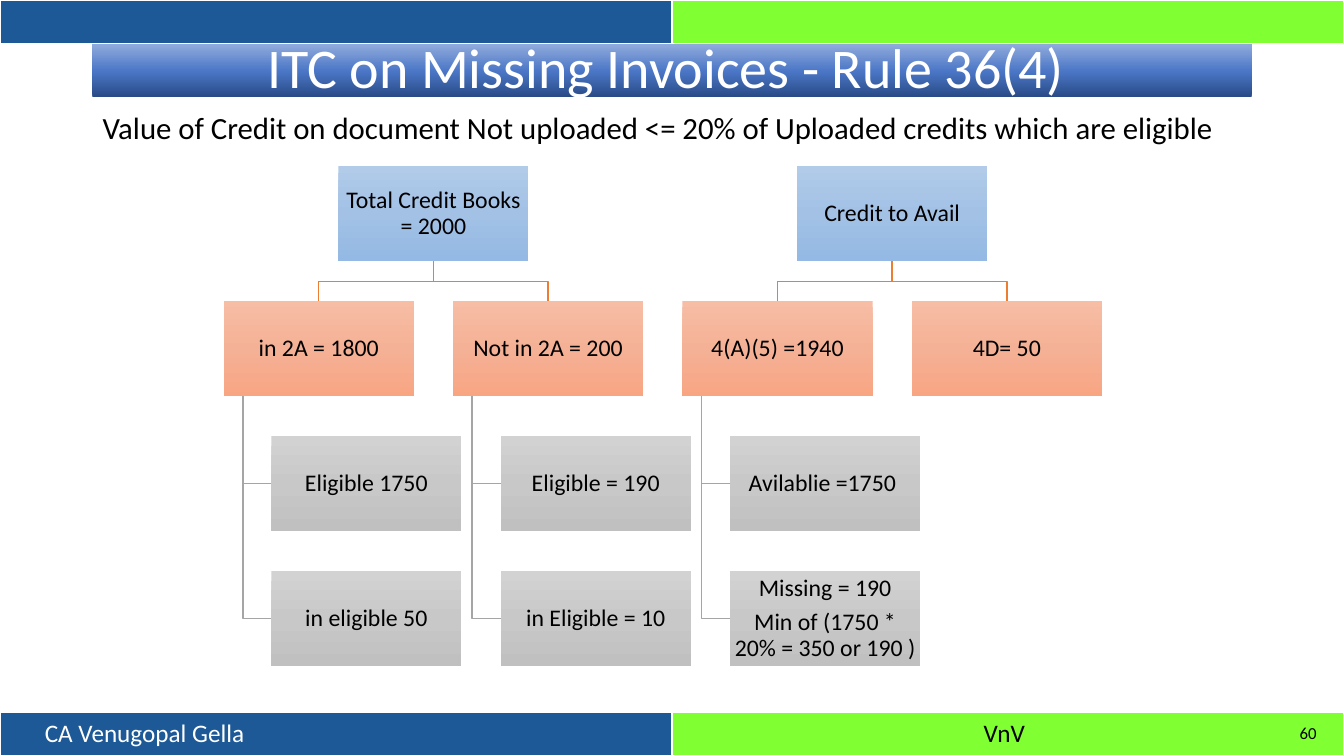
from copy import deepcopy

from lxml.etree import SubElement
from pptx import Presentation
from pptx.dml.color import RGBColor
from pptx.enum.shapes import MSO_SHAPE as Preset
from pptx.enum.text import MSO_ANCHOR as Anchor, MSO_AUTO_SIZE as AutoSize, PP_ALIGN as Align
from pptx.oxml.ns import qn
from pptx.util import Cm, Pt

WHITE = RGBColor(0xFF, 0xFF, 0xFF)
BLACK = RGBColor(0x00, 0x00, 0x00)
BLUE = RGBColor(0x1D, 0x59, 0x96)
GREEN = RGBColor(0x80, 0xFF, 0x33)
ORANGE = RGBColor(0xED, 0x7D, 0x31)
GRAY = RGBColor(0xA5, 0xA5, 0xA5)
TITLE_SHADES = [(0, RGBColor(0x2A, 0x4B, 0x86)), (0.48, RGBColor(0x4A, 0x76, 0xC6)),
                (1, RGBColor(0x8F, 0xAA, 0xDC))]
ROOT_SHADES = [(0, RGBColor(0xB1, 0xCB, 0xE9)), (0.5, RGBColor(0xA3, 0xC1, 0xE5)),
               (1, RGBColor(0x93, 0xB9, 0xE4))]
BRANCH_SHADES = [(0, RGBColor(0xF7, 0xBD, 0xA5)), (0.5, RGBColor(0xF5, 0xB1, 0x96)),
                 (1, RGBColor(0xF8, 0xA5, 0x82))]
LEAF_SHADES = [(0, RGBColor(0xD2, 0xD2, 0xD2)), (0.5, RGBColor(0xC8, 0xC8, 0xC8)),
               (1, RGBColor(0xC0, 0xC0, 0xC0))]

SLIDE_WIDTH, SLIDE_HEIGHT = Cm(33.87), Cm(19.05)
BAND_HEIGHT = Cm(1.09)
NODE_WIDTH, NODE_HEIGHT = Cm(4.79), Cm(2.4)
COLUMN_STEP, ROW_STEP = Cm(5.78), Cm(3.4)
LEAF_INDENT, STEM_INDENT = Cm(1.2), Cm(0.48)

# Each tree: root text, then branches of (text, leaves); a leaf is a list of lines.
TREES = [
    ("Total Credit Books = 2000", [
        ("in 2A = 1800", [["Eligible 1750"], ["in eligible 50"]]),
        ("Not in 2A = 200", [["Eligible = 190"], ["in Eligible = 10"]]),
    ]),
    ("Credit to Avail", [
        ("4(A)(5) =1940", [["Avilablie =1750 "],
                           ["Missing = 190", "Min of (1750 * 20% = 350 or 190 )"]]),
        ("4D= 50", []),
    ]),
]


def write_text(frame, lines, size, color=BLACK, align=Align.LEFT, anchor=Anchor.TOP,
               spacing=1.0, before=0, after=0, wrap=True):
    frame.auto_size = AutoSize.NONE
    frame.word_wrap = wrap
    frame.vertical_anchor = anchor
    for index, line in enumerate(lines):
        para = frame.paragraphs[0] if index == 0 else frame.add_paragraph()
        para.alignment, para.line_spacing = align, spacing
        para.space_before, para.space_after = Pt(before), Pt(after)
        span = para.add_run()
        span.text = line
        span.font.name, span.font.size = "Calibri", Pt(size)
        span.font.color.rgb = color


def place(shape, left, top, width, height):
    shape.left, shape.top, shape.width, shape.height = left, top, width, height


def shade(shape, stops, angle):
    """Fill with a three-stop gradient; the angle runs counterclockwise."""
    fill = shape.fill
    fill.gradient()
    fill.gradient_angle = angle
    stop_list = next(shape.element.iter(qn("a:gsLst")))
    stop_list.append(deepcopy(stop_list[-1]))
    for stop, (position, color) in zip(fill.gradient_stops, stops):
        stop.position = position
        stop.color.rgb = color


def add_band(page, top):
    frame = page.shapes.add_table(1, 2, 0, top, SLIDE_WIDTH, BAND_HEIGHT)
    for cell, color in zip(frame.table.rows[0].cells, (BLUE, GREEN)):
        cell.fill.solid()
        cell.fill.fore_color.rgb = color


def add_label(page, text, left, top, width, height, **text_format):
    box = page.shapes.add_textbox(left, top, width, height)
    write_text(box.text_frame, [text], **text_format)


def add_footer(page, top):
    add_band(page, top)
    height = Cm(1.03)
    add_label(page, "CA Venugopal Gella", Cm(0.88), top, Cm(5.61), height,
              size=18, color=WHITE, wrap=False)
    add_label(page, "VnV", Cm(24.54), top, Cm(1.57), height, size=18, wrap=False)
    add_label(page, "60", Cm(25.81), top, Cm(7.62), height,
              size=12, align=Align.RIGHT, anchor=Anchor.MIDDLE)


def fill_title(title, *box):
    place(title, *box)
    shade(title, TITLE_SHADES, 90)
    write_text(title.text_frame, ["ITC on Missing Invoices - Rule 36(4) "], size=40,
               color=WHITE, align=Align.CENTER, anchor=Anchor.MIDDLE, spacing=0.9)


def fill_body(body, *box):
    place(body, *box)
    write_text(body.text_frame, ["Value of Credit on document Not uploaded <= 20% of "
                                 "Uploaded credits which are eligible"],
               size=22, align=Align.JUSTIFY, spacing=0.9, before=10)
    properties = next(body.element.iter(qn("a:pPr")))
    properties.set("marL", "0")
    properties.set("indent", "0")
    SubElement(properties, qn("a:buNone"))


def add_elbow(page, points, color):
    builder = page.shapes.build_freeform(*points[0])
    builder.add_line_segments(points[1:], close=False)
    elbow = builder.convert_to_shape()
    elbow.fill.background()
    elbow.line.color.rgb = color
    elbow.line.width = Pt(1)
    elbow.shadow.inherit = False


def add_node(page, lines, left, top, shades):
    node = page.shapes.add_shape(Preset.RECTANGLE, left, top, NODE_WIDTH, NODE_HEIGHT)
    node.shadow.inherit = False
    node.line.fill.background()
    shade(node, shades, 270)
    frame = node.text_frame
    frame.margin_left = frame.margin_right = frame.margin_top = frame.margin_bottom = Cm(0.03)
    write_text(frame, lines, size=17, align=Align.CENTER, anchor=Anchor.MIDDLE,
               spacing=0.9, after=6)


def add_branch(page, text, leaves, left, top):
    stem, leaf_left = left + STEM_INDENT, left + LEAF_INDENT
    for row, lines in enumerate(leaves, start=1):
        leaf_top = top + row * ROW_STEP
        middle = leaf_top + NODE_HEIGHT // 2
        add_elbow(page, [(stem, top + NODE_HEIGHT), (stem, middle), (leaf_left, middle)], GRAY)
        add_node(page, lines, leaf_left, leaf_top, LEAF_SHADES)
    add_node(page, [text], left, top, BRANCH_SHADES)


def add_tree(page, root, branches, left, top):
    root_left = left + (len(branches) - 1) * COLUMN_STEP // 2
    center, root_bottom = root_left + NODE_WIDTH // 2, top + NODE_HEIGHT
    branch_top = top + ROW_STEP
    fork = (root_bottom + branch_top) // 2
    for column, (text, leaves) in enumerate(branches):
        branch_left = left + column * COLUMN_STEP
        branch_center = branch_left + NODE_WIDTH // 2
        add_elbow(page, [(center, root_bottom), (center, fork),
                         (branch_center, fork), (branch_center, branch_top)], ORANGE)
        add_branch(page, text, leaves, branch_left, branch_top)
    add_node(page, [root], root_left, top, ROOT_SHADES)


def add_trees(page, left, top):
    for root, branches in TREES:
        add_tree(page, root, branches, left, top)
        left += len(branches) * COLUMN_STEP


def main():
    deck = Presentation()
    deck.slide_width, deck.slide_height = SLIDE_WIDTH, SLIDE_HEIGHT
    page = deck.slides.add_slide(deck.slide_layouts[1])
    add_band(page, 0)
    add_footer(page, SLIDE_HEIGHT - BAND_HEIGHT)
    fill_title(page.shapes.title, Cm(2.33), Cm(1.12), Cm(29.21), Cm(1.32))
    fill_body(page.placeholders[1], Cm(2.33), Cm(2.72), Cm(29.21), Cm(14.45))
    add_trees(page, Cm(5.64), Cm(4.19))
    deck.save("out.pptx")


if __name__ == "__main__":
    main()
